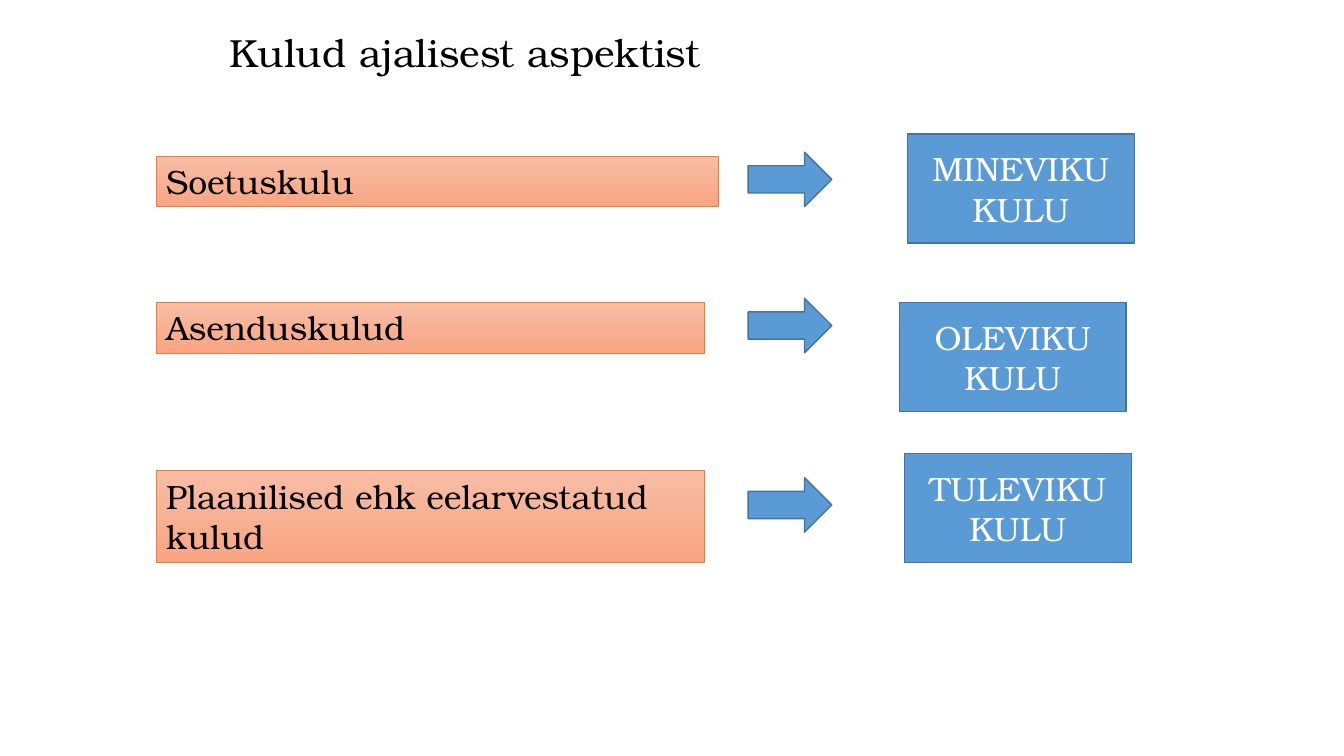
from pptx import Presentation
from pptx.dml.color import RGBColor
from pptx.enum.shapes import MSO_SHAPE
from pptx.enum.text import MSO_ANCHOR, MSO_AUTO_SIZE, PP_ALIGN
from pptx.util import Inches, Pt

RECTANGLE = MSO_SHAPE.RECTANGLE
RIGHT_ARROW = MSO_SHAPE.RIGHT_ARROW
TOP = MSO_ANCHOR.TOP
MIDDLE = MSO_ANCHOR.MIDDLE
NO_FIT = MSO_AUTO_SIZE.NONE
GROW = MSO_AUTO_SIZE.SHAPE_TO_FIT_TEXT
LEFT = PP_ALIGN.LEFT
CENTER = PP_ALIGN.CENTER

FONT = "TeX Gyre Bonum"
TITLE_ONLY = 5
BLACK, WHITE = "000000", "FFFFFF"
BLUE, DARK_BLUE = "5B9BD5", "43739E"
ORANGE = "ED7D31"
PEACH_GRADIENT = ("F7BDA5", "F8A582")

TITLE_FORMAT = {"size": 28, "color": BLACK, "align": LEFT, "anchor": MIDDLE,
                "fit": NO_FIT, "spacing": 0.9}
COST_FORMAT = {"size": 24, "color": BLACK, "align": LEFT, "anchor": TOP,
               "fit": GROW, "spacing": 1.0}
PERIOD_FORMAT = {"size": 24, "color": WHITE, "align": CENTER, "anchor": MIDDLE,
                 "fit": NO_FIT, "spacing": 1.0}

COST_ROWS = [
    ("Soetuskulu", (1.55, 1.55, 5.58, 0.5), 1.51,
     "MINEVIKU\nKULU", (9, 1.33)),
    ("Asenduskulud", (1.55, 3, 5.44, 0.51), 2.96,
     "OLEVIKU\nKULU", (8.92, 3)),
    ("Plaanilised ehk eelarvestatud\nkulud", (1.55, 4.67, 5.44, 0.91), 4.74,
     "TULEVIKU\nKULU", (8.97, 4.5)),
]
ARROW_LEFT = 7.42
ARROW_SIZE = (0.83, 0.54)
PERIOD_SIZE = (2.25, 1.08)


def rgb(value):
    return RGBColor.from_string(value)


def write_text(shape, text, text_format):
    frame = shape.text_frame
    frame.text = text
    frame_values = {"word_wrap": True, "auto_size": text_format["fit"],
                    "vertical_anchor": text_format["anchor"]}
    for name, value in frame_values.items():
        setattr(frame, name, value)
    font_values = {"name": FONT, "size": Pt(text_format["size"]), "bold": False}
    for paragraph in frame.paragraphs:
        paragraph.alignment = text_format["align"]
        paragraph.line_spacing = text_format["spacing"]
        for run in paragraph.runs:
            for name, value in font_values.items():
                setattr(run.font, name, value)
            run.font.color.rgb = rgb(text_format["color"])


def add_block(slide, kind, box, line_color, line_width):
    shape = slide.shapes.add_shape(kind, *map(Inches, box))
    shape.shadow.inherit = False
    shape.line.color.rgb = rgb(line_color)
    shape.line.width = Pt(line_width)
    return shape


def place_title(slide, box, text):
    title = slide.shapes.title
    for name, value in zip(("left", "top", "width", "height"), box):
        setattr(title, name, Inches(value))
    write_text(title, text, TITLE_FORMAT)


def add_cost(slide, box, text):
    shape = add_block(slide, RECTANGLE, box, ORANGE, 0.5)
    shape.fill.gradient()
    shape.fill.gradient_angle = 270
    for stop, color in zip(shape.fill.gradient_stops, PEACH_GRADIENT):
        stop.color.rgb = rgb(color)
    write_text(shape, text, COST_FORMAT)


def add_blue_block(slide, kind, box):
    shape = add_block(slide, kind, box, DARK_BLUE, 1)
    shape.fill.solid()
    shape.fill.fore_color.rgb = rgb(BLUE)
    return shape


def add_period(slide, box, text):
    shape = add_blue_block(slide, RECTANGLE, box)
    write_text(shape, text, PERIOD_FORMAT)


def build_slide(presentation):
    slide = presentation.slides.add_slide(presentation.slide_layouts[TITLE_ONLY])
    place_title(slide, (2.18, 0.26, 8.82, 0.57), "Kulud ajalisest aspektist")
    for cost, cost_box, arrow_top, period, period_corner in COST_ROWS:
        add_cost(slide, cost_box, cost)
        add_blue_block(slide, RIGHT_ARROW, (ARROW_LEFT, arrow_top) + ARROW_SIZE)
        add_period(slide, period_corner + PERIOD_SIZE, period)


def main():
    presentation = Presentation()
    presentation.slide_width = Inches(13.33)
    presentation.slide_height = Inches(7.5)
    build_slide(presentation)
    presentation.save("out.pptx")


if __name__ == "__main__":
    main()
